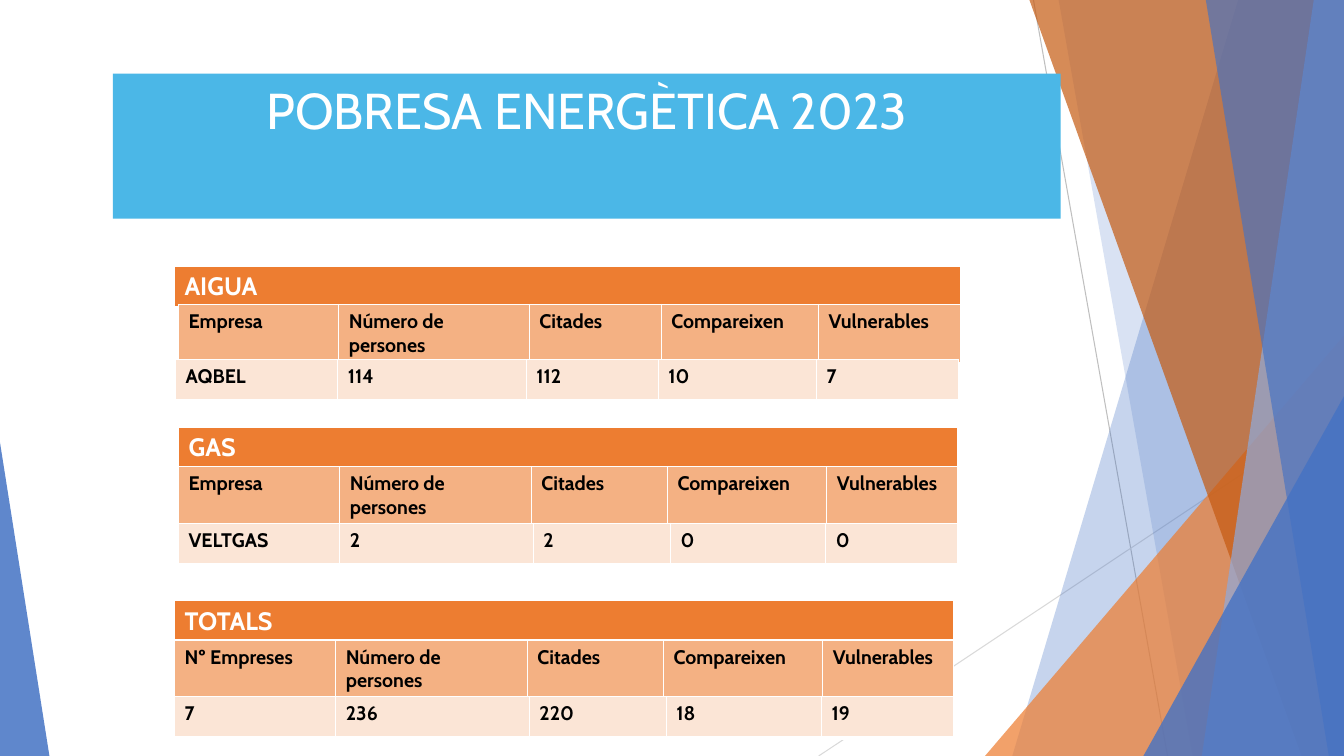
from lxml import etree
from pptx import Presentation
from pptx.dml.color import RGBColor
from pptx.enum.shapes import MSO_CONNECTOR, MSO_SHAPE
from pptx.enum.text import MSO_ANCHOR, MSO_AUTO_SIZE, PP_ALIGN
from pptx.oxml.ns import qn
from pptx.util import Inches, Pt

STRAIGHT = MSO_CONNECTOR.STRAIGHT
TRIANGLE = MSO_SHAPE.ISOSCELES_TRIANGLE
TOP = MSO_ANCHOR.TOP
CENTER = PP_ALIGN.CENTER
NO_FIT = MSO_AUTO_SIZE.NONE

WIDE, HIGH = 13.33, 7.5
FONT = "Cabin"
WHITE, BLACK = "FFFFFF", "000000"
ORANGE, PEACH, CREAM = "ED7D31", "F4B183", "FBE5D6"
BLUE, SKY = "4472C4", "4BB7E7"
EDGES = (("a:lnL", 1), ("a:lnR", 1), ("a:lnT", 1), ("a:lnB", 3))
LABELS = ["Número de persones", "Citades", "Compareixen", "Vulnerables"]
HEAD_COLS = [1.6, 1.9, 1.35, 1.58, 1.3]
DATA_COLS = [1.6, 1.92, 1.36, 1.54, 1.31]

BLOCKS = [
    [
        (1.73, 2.64, 0.41, [7.8], ["AIGUA"], ORANGE),
        (1.77, 3.02, 0.59, [1.59, 1.89, 1.31, 1.56, 1.41], ["Empresa"] + LABELS, PEACH),
        (1.74, 3.57, 0.41, [1.61, 1.87, 1.31, 1.57, 1.41],
         ["AQBEL", "114", "112", "10", "7"], CREAM),
    ],
    [
        (1.77, 4.24, 0.39, [7.73], ["GAS"], ORANGE),
        (1.77, 4.63, 0.57, HEAD_COLS, ["Empresa"] + LABELS, PEACH),
        (1.77, 5.19, 0.41, DATA_COLS, ["VELTGAS", "2", "2", "0", "0"], CREAM),
    ],
    [
        (1.73, 5.96, 0.39, [7.73], ["TOTALS"], ORANGE),
        (1.73, 6.35, 0.57, HEAD_COLS, ["Nº Empreses"] + LABELS, PEACH),
        (1.73, 6.91, 0.41, DATA_COLS, ["7", "236", "220", "18", "19"], CREAM),
    ],
]


def rgb(color):
    return RGBColor.from_string(color)


def paint(shape, color, alpha):
    shape.shadow.inherit = False
    shape.fill.solid()
    shape.fill.fore_color.rgb = rgb(color)
    shape.line.fill.background()
    tint = shape.fill._xPr.find(qn("a:solidFill"))[0]
    etree.SubElement(tint, qn("a:alpha"), val=str(alpha * 1000))


def add_line(slide, start, end, color):
    ends = [Inches(v) for v in start + end]
    line = slide.shapes.add_connector(STRAIGHT, *ends)
    line.line.color.rgb = rgb(color)
    line.line.width = Pt(0.75)
    etree.SubElement(line._element.spPr, qn("a:effectLst"))


def add_beam(slide, top, foot, color, alpha):
    path = slide.shapes.build_freeform(Inches(top), 0)
    corners = [(WIDE, 0), (WIDE, HIGH), (foot, HIGH)]
    path.add_line_segments([(Inches(x), Inches(y)) for x, y in corners])
    paint(path.convert_to_shape(), color, alpha)


def add_wedge(slide, left, top, width, apex, color, alpha):
    box = [Inches(v) for v in (left, top, width, HIGH - top)]
    wedge = slide.shapes.add_shape(TRIANGLE, *box)
    wedge.adjustments[0] = apex
    paint(wedge, color, alpha)


def add_decor(slide):
    add_line(slide, (10.25, 0), (11.58, HIGH), "BFBFBF")
    add_line(slide, (WIDE, 4.03), (8.12, HIGH), "D9D9D9")
    add_beam(slide, 12.28, 10.04, BLUE, 30)
    add_beam(slide, 10.5, 11.83, BLUE, 20)
    add_wedge(slide, 9.77, 3.33, 3.56, 1, ORANGE, 72)
    add_beam(slide, 10.21, 12.91, "C55A11", 70)
    add_beam(slide, 13.03, 11.92, "8FAADC", 70)
    add_beam(slide, 11.96, 13.18, BLUE, 65)
    add_wedge(slide, 11.34, 3.93, 1.99, 1, BLUE, 80)
    add_wedge(slide, 0, 4.39, 0.49, 0, BLUE, 85)


def style(para, size, color, bold):
    for run in para.runs:
        run.font.name = FONT
        run.font.size = Pt(size)
        run.font.bold = bold
        run.font.color.rgb = rgb(color)


def set_title(slide, text):
    title = slide.shapes.title
    title.left, title.top = Inches(1.12), Inches(0.73)
    title.width, title.height = Inches(9.4), Inches(1.44)
    title.fill.solid()
    title.fill.fore_color.rgb = rgb(SKY)
    frame = title.text_frame
    frame.text = text
    frame.word_wrap = True
    frame.auto_size = NO_FIT
    frame.vertical_anchor = TOP
    frame.paragraphs[0].alignment = CENTER
    style(frame.paragraphs[0], 36, WHITE, False)
    slide.shapes._spTree.append(title._element)


def add_edges(cell):
    props = cell._tc.get_or_add_tcPr()
    for spot, (tag, width) in enumerate(EDGES):
        edge = etree.Element(qn(tag), w=str(Pt(width)))
        fill = etree.SubElement(edge, qn("a:solidFill"))
        etree.SubElement(fill, qn("a:srgbClr"), val=WHITE)
        props.insert(spot, edge)


def add_strip(slide, left, top, height, cols, words, color):
    """Add a table of one row, with a larger white label when it is a band."""
    box = [Inches(v) for v in (left, top, sum(cols), height)]
    table = slide.shapes.add_table(1, len(cols), *box).table
    table.first_row = table.horz_banding = False
    size, ink = (18, WHITE) if color == ORANGE else (14, BLACK)
    for col, width, cell, word in zip(table.columns, cols, table.rows[0].cells, words):
        col.width = Inches(width)
        cell.text_frame.text = word
        style(cell.text_frame.paragraphs[0], size, ink, True)
        cell.fill.solid()
        cell.fill.fore_color.rgb = rgb(color)
        add_edges(cell)


def main():
    deck = Presentation()
    deck.slide_width, deck.slide_height = Inches(WIDE), Inches(HIGH)
    slide = deck.slides.add_slide(deck.slide_layouts[5])
    add_decor(slide)
    set_title(slide, "POBRESA ENERGÈTICA 2023")
    for block in BLOCKS:
        for strip in block:
            add_strip(slide, *strip)
    deck.save("out.pptx")


if __name__ == "__main__":
    main()
